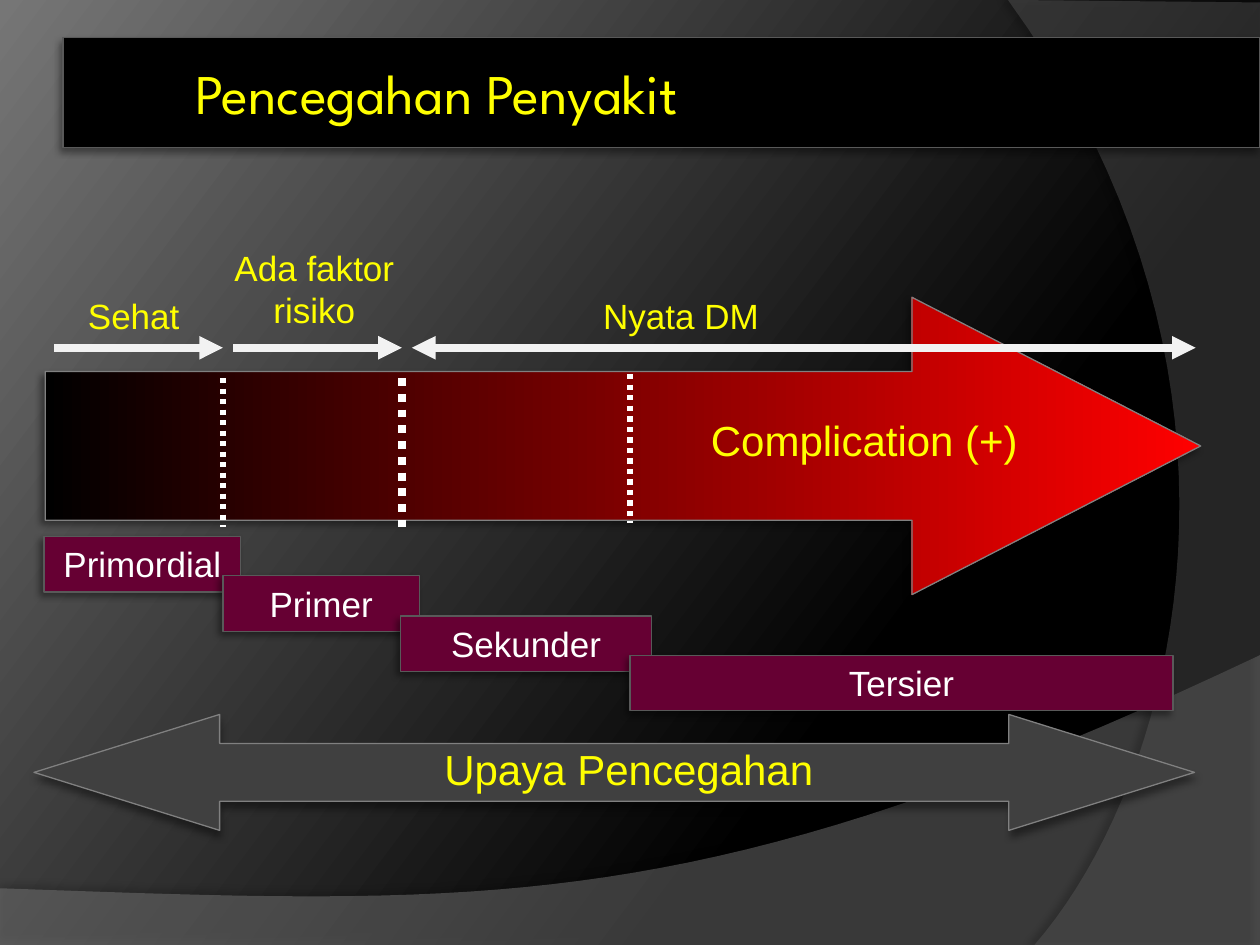
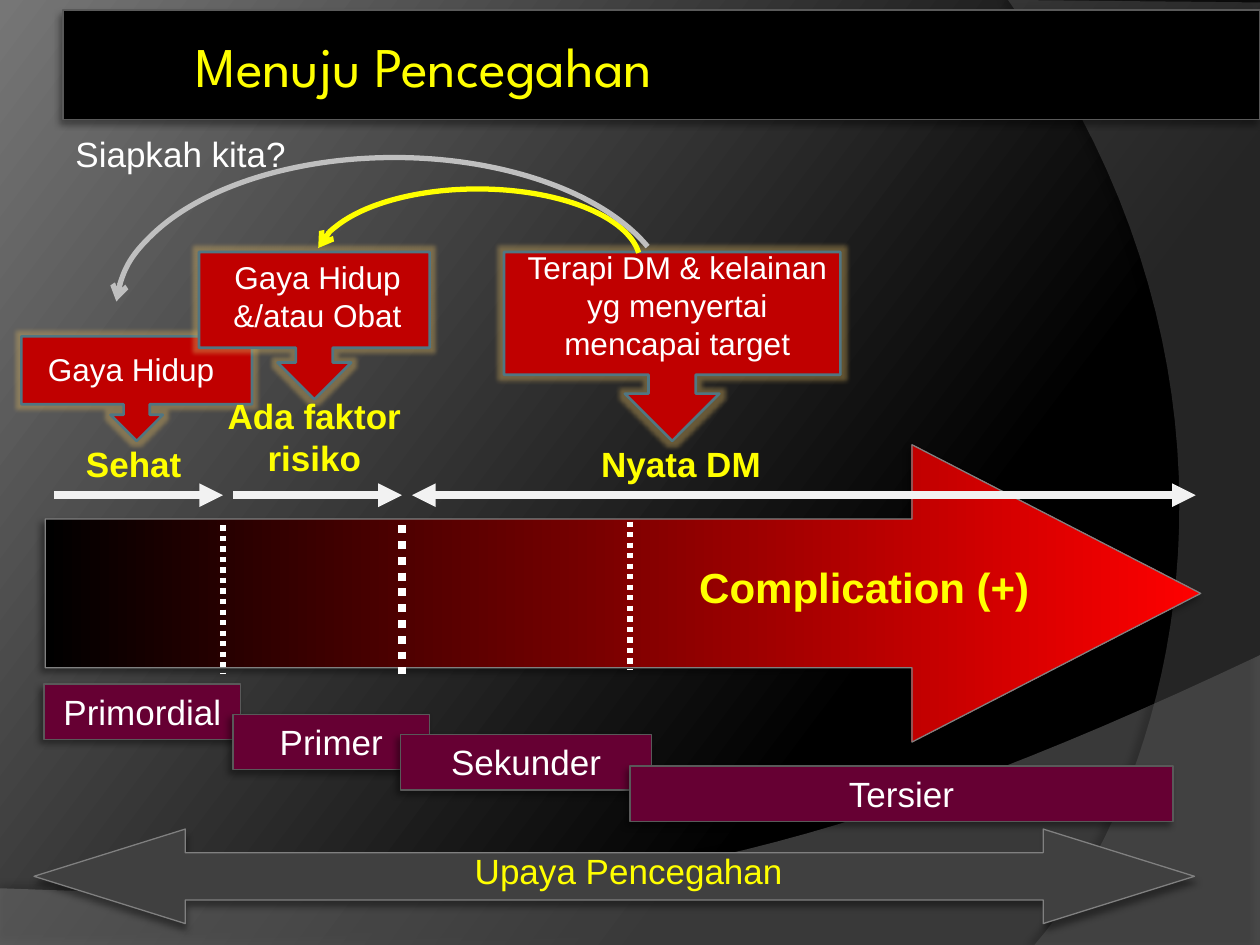
from lxml import etree
from pptx import Presentation
from pptx import util as u
from pptx.dml.color import RGBColor
from pptx.enum import dml, shapes, text
from pptx.oxml.ns import qn

W, H = 10, 7.5
BODY_FONT, TITLE_FONT = "Arial", "League Spartan"
COLORS = {
    "black": "000000", "bg": "767676", "curve": "7F7F7F", "side": "5E5E5E",
    "edge": "595959", "arrow_edge": "808080", "yellow": "FFFF00", "white": "FFFFFF",
    "red": "FF0000", "callout": "C00000", "callout_edge": "517682", "glow": "D6B15E",
    "step": "660033", "effort": "404040", "span": "F2F2F2", "gray": "BFBFBF",
}

# Outlines: a start point, then line ends (x, y) or curves (x1, y1, x2, y2, x, y)
BACKDROP = [
    dict(color="curve", alpha=45, shadow=(35, 3.5, 270),
         outline=[(0, 7.05), (0, H), (W, H), (W, 5.2), (5.59, 7.29, 3.91, 7.19, 0, 7.05)]),
    dict(color="side", alpha=40, shadow=(45, 4, 180),
         outline=[(W, 0.02), (W, H), (8.21, H), (9.35, 6.19, 10.18, 3, 8, 0)]),
]

# Timeline lengths are measured down from the top of the big arrow
SPANS = [(0.43, 1.77, False), (1.85, 3.19, False), (3.27, 9.49, True)]
DIVIDERS = [(1.77, 0.64, 3), (3.19, 0.64, 4.5), (5, 0.61, 3)]
PHASES = [
    ("Sehat ", 0.51, -0.07, 1.18, 20),
    ("Ada faktor risiko", 1.67, -0.45, 1.65, 20),
    ("Nyata DM", 3.92, -0.07, 2.97, 20),
    ("Complication (+)", 5.31, 0.88, 3.1, 24),
]
STEPS = [("Primordial", 0.35, 1.56), ("Primer", 1.77, 1.56),
         ("Sekunder", 3.18, 1.99), ("Tersier", 5, 4.31)]

SLIDES = [
    dict(title="Pencegahan Penyakit", title_top=0.3, top=2.36, bold=False,
         step_tops=[4.26, 4.57, 4.89, 5.2], step_shifts=[0, 0, 0, 0],
         effort=(5.67, 0.92), effort_text=(5.85, 24)),
    dict(title="Menuju Pencegahan", title_top=0.08, top=3.53, bold=True,
         step_tops=[5.43, 5.67, 5.83, 6.08], step_shifts=[0, 0.08, 0, 0],
         effort=(6.58, 0.75), effort_text=(6.69, 20)),
]
CALLOUTS = [  # callout box, text, text left, top, width
    ((0.17, 2.67, 1.83, 0.83), "Gaya Hidup", 0, 2.73, 2.08),
    ((1.58, 2, 1.83, 1.17), "Gaya Hidup &/atau Obat", 1.48, 2, 2.08),
    ((4, 2, 2.67, 1.5), "Terapi DM & kelainan yg menyertai mencapai target", 4, 1.92, 2.75),
]
ARCS = [  # box, start and end in degrees, colour
    ((2.5, 1.5, 2.58, 1.17), (185.24, 356.5), "yellow"),
    ((0.92, 1.25, 4.42, 2.42), (181.75, 345.95), "gray"),
]


def rgb(name):
    return RGBColor.from_string(COLORS[name])


def inches(values):
    return [u.Inches(v) for v in values]


def add_color(parent, name, alpha):
    clr = etree.SubElement(parent, qn("a:srgbClr"), val=COLORS[name])
    etree.SubElement(clr, qn("a:alpha"), val=str(alpha * 1000))


def set_effects(sp, shadow=None, glow=None):
    """Replace effects; shadow is (alpha, distance, degrees), glow a colour name."""
    spPr = sp.element.spPr
    for old in spPr.findall(qn("a:effectLst")):
        spPr.remove(old)
    effects = etree.SubElement(spPr, qn("a:effectLst"))
    if glow:
        add_color(etree.SubElement(effects, qn("a:glow"), rad=str(u.Pt(5))), glow, 40)
    if shadow:
        alpha, dist, angle = shadow
        node = etree.SubElement(effects, qn("a:outerShdw"), blurRad=str(u.Pt(4)),
                                dist=str(u.Pt(dist)), dir=str(angle * 60000),
                                algn="ctr", rotWithShape="0")
        add_color(node, "black", alpha)


def set_gradient(fill, stops, angle):
    fill.gradient()
    fill.gradient_angle = angle
    for stop, (position, color) in zip(fill.gradient_stops, stops):
        stop.position = position
        stop.color.rgb = rgb(color)


def paint(sp, fill, line, width=0.75, **effects):
    if fill:
        sp.fill.solid()
        sp.fill.fore_color.rgb = rgb(fill)
    else:
        sp.fill.background()
    sp.line.color.rgb = rgb(line)
    sp.line.width = u.Pt(width)
    set_effects(sp, **effects)


def add_heads(sp, head=None, tail=None):
    ln = sp.element.spPr.find(qn("a:ln"))
    for tag, kind in (("a:headEnd", head), ("a:tailEnd", tail)):
        if kind:
            etree.SubElement(ln, qn(tag), type=kind)


def write(sp, words, size, color, font=BODY_FONT, bold=False, align=text.PP_ALIGN.CENTER):
    tf = sp.text_frame
    tf.word_wrap = True
    tf.text = words
    p = tf.paragraphs[0]
    p.alignment = align
    r = p.runs[0].font
    r.name, r.size, r.bold = font, u.Pt(size), bold
    r.color.rgb = rgb(color)
    return tf


def add_label(slide, words, left, top, width, size, color="yellow", **style):
    box = slide.shapes.add_textbox(*inches((left, top, width, 0.1 + size / 60)))
    write(box, words, size, color, **style)


def add_preset(slide, kind, box):
    return slide.shapes.add_shape(kind, *inches(box))


def add_line(slide, x1, y1, x2, y2, color, width):
    line = slide.shapes.add_connector(shapes.MSO_CONNECTOR.STRAIGHT, *inches((x1, y1, x2, y2)))
    line.line.color.rgb = rgb(color)
    line.line.width = u.Pt(width)
    set_effects(line)
    return line


def trace(outline, steps=40):
    """Turn lines and Bezier curves into a list of points."""
    points = [outline[0]]
    for seg in outline[1:]:
        if len(seg) == 2:
            points.append(seg)
            continue
        ctrl = [points[-1], seg[:2], seg[2:4], seg[4:]]
        for i in range(1, steps + 1):
            t = i / steps
            weights = ((1 - t) ** 3, 3 * t * (1 - t) ** 2, 3 * t * t * (1 - t), t ** 3)
            points.append(tuple(sum(w * c[k] for w, c in zip(weights, ctrl)) for k in (0, 1)))
    return points


def add_backdrop(layout, slide):
    """Give the layout its background and the two translucent outlines."""
    set_gradient(layout.background.fill, [(0.3, "black"), (1, "bg")], 143)
    for i, part in enumerate(BACKDROP):
        first, *rest = [inches(pt) for pt in trace(part["outline"])]
        builder = slide.shapes.build_freeform(*first)
        builder.add_line_segments(rest, close=True)
        sp = builder.convert_to_shape()
        sp.fill.solid()
        sp.fill.fore_color.rgb = rgb(part["color"])
        clr = sp.element.spPr.find(qn("a:solidFill"))[0]
        etree.SubElement(clr, qn("a:alpha"), val=str(part["alpha"] * 1000))
        sp.line.fill.background()
        set_effects(sp, shadow=part["shadow"])
        sp.element.nvSpPr.cNvPr.id = 20 + i
        layout.shapes.element.insert(2 + i, sp.element)


def add_title(slide, words, top):
    title = slide.shapes.title
    title.left, title.top, title.width, title.height = inches((0.5, top, 9.5, 0.87))
    paint(title, "black", "edge", shadow=(40, 3, 135))
    tf = write(title, words, 32, "yellow", font=TITLE_FONT, align=text.PP_ALIGN.LEFT)
    tf.auto_size = text.MSO_AUTO_SIZE.NONE
    tf.vertical_anchor = text.MSO_ANCHOR.MIDDLE
    tf.margin_left = u.Inches(1.05)
    tf.margin_right = tf.margin_top = tf.margin_bottom = u.Inches(0.05)


def add_timeline(slide, top, bold):
    arrow = add_preset(slide, shapes.MSO_SHAPE.RIGHT_ARROW, (0.36, top, 9.17, 2.36))
    arrow.adjustments[0], arrow.adjustments[1] = 0.5, 0.971
    paint(arrow, "red", "arrow_edge", shadow=(40, 3, 135))
    set_gradient(arrow.fill, [(0, "black"), (1, "red")], 0)
    for x, drop, width in DIVIDERS:
        line = add_line(slide, x, top + drop, x, top + drop + 1.18, "white", width)
        line.line.dash_style = dml.MSO_LINE.ROUND_DOT
    for x1, x2, both in SPANS:
        line = add_line(slide, x1, top + 0.4, x2, top + 0.4, "span", 4.5)
        add_heads(line, head="triangle" if both else None, tail="triangle")
    for words, left, drop, width, size in PHASES:
        add_label(slide, words, left, top + drop, width, size, bold=bold)


def add_steps(slide, tops, shifts):
    for (words, left, width), top, shift in zip(STEPS, tops, shifts):
        box = add_preset(slide, shapes.MSO_SHAPE.RECTANGLE, (left + shift, top, width, 0.44))
        paint(box, "step", "edge", shadow=(40, 3, 135))
        write(box, words, 20, "white").vertical_anchor = text.MSO_ANCHOR.TOP


def add_effort(slide, band, label):
    top, height = band
    arrow = add_preset(slide, shapes.MSO_SHAPE.LEFT_RIGHT_ARROW, (0.27, top, 9.21, height))
    arrow.adjustments[0], arrow.adjustments[1] = 0.5, 1.601
    paint(arrow, "effort", "arrow_edge", shadow=(40, 3, 90))
    add_label(slide, "Upaya Pencegahan", 3, label[0], 3.98, label[1])


def add_callouts(slide):
    for box, *_ in CALLOUTS:
        sp = add_preset(slide, shapes.MSO_SHAPE.DOWN_ARROW_CALLOUT, box)
        paint(sp, "callout", "callout_edge", 1.5, glow="glow")
    for _, words, left, top, width in CALLOUTS:
        add_label(slide, words, left, top, width, 18, "white")


def add_arcs(slide):
    for box, angles, color in ARCS:
        arc = add_preset(slide, shapes.MSO_SHAPE.ARC, box)
        for i, degrees in enumerate(angles):
            arc.adjustments[i] = degrees * 0.6  # 60000 units a degree, stored per 100000
        paint(arc, None, color, 3)
        add_heads(arc, head="arrow")


def main():
    prs = Presentation()
    prs.slide_width, prs.slide_height = inches((W, H))
    layout = prs.slide_layouts[5]
    slides = [prs.slides.add_slide(layout) for _ in SLIDES]
    add_backdrop(layout, slides[0])
    prevention = slides[1]
    add_callouts(prevention)
    for slide, data in zip(slides, SLIDES):
        add_title(slide, data["title"], data["title_top"])
        add_timeline(slide, data["top"], data["bold"])
        add_steps(slide, data["step_tops"], data["step_shifts"])
        add_effort(slide, data["effort"], data["effort_text"])
    add_label(prevention, "Siapkah kita?", 0.5, 1, 2.58, 20, "white", align=text.PP_ALIGN.LEFT)
    add_arcs(prevention)
    prs.save("out.pptx")


if __name__ == "__main__":
    main()
